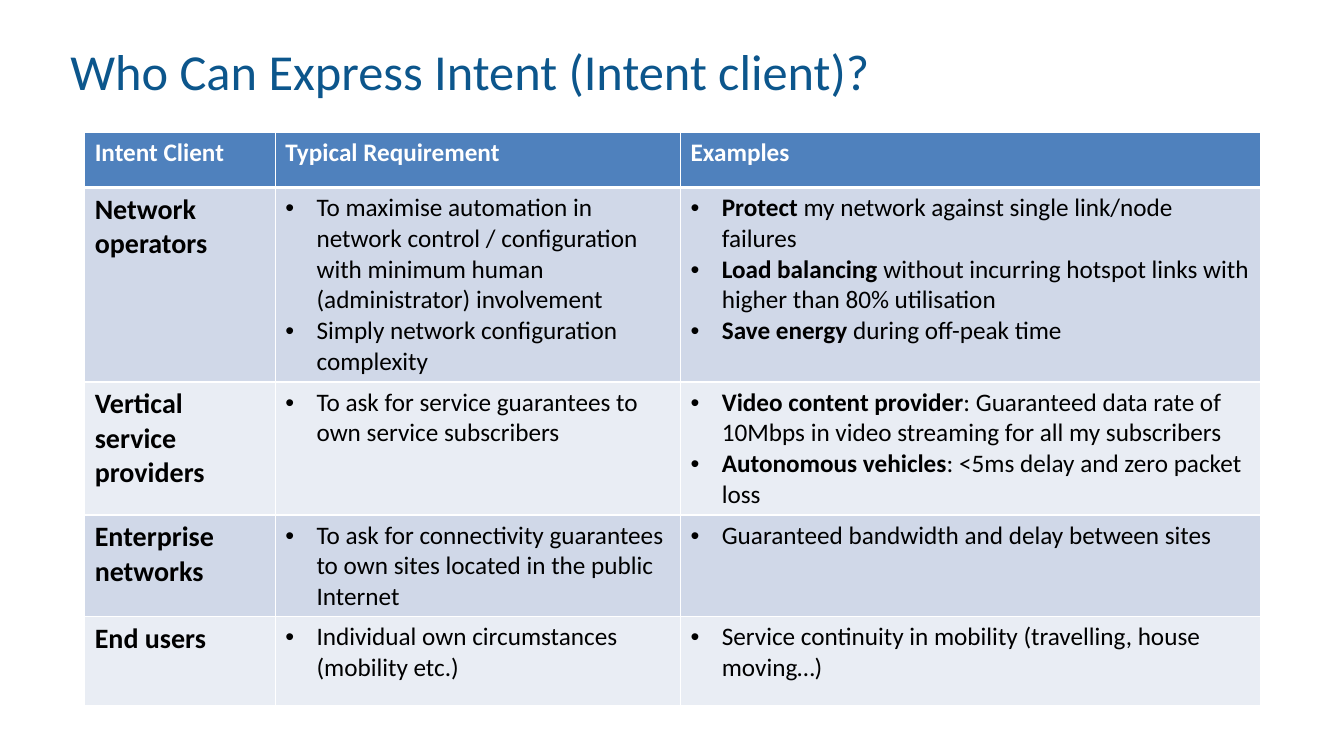
from lxml import etree
from pptx import Presentation
from pptx.dml.color import RGBColor
from pptx.enum.text import MSO_ANCHOR
from pptx.oxml.ns import qn
from pptx.util import Pt

MIDDLE = MSO_ANCHOR.MIDDLE
PX = 9144  # EMU per px, at 100 px to the inch
FONT = "Calibri"
COLOURS = {
    "title": "0C568C",
    "header": "4F81BD",
    "odd row": "D0D8E8",
    "even row": "E9EDF4",
    "light": "FFFFFF",
    "text": "000000",
}

TITLE = "Who Can Express Intent (Intent client)?"
HEADINGS = ["Intent Client", "Typical Requirement", "Examples"]
# Each bullet is a bold lead followed by plain text.
CLIENTS = [
    ("Network operators",
     [("", "To maximise automation in network control / configuration "
           "with minimum human (administrator) involvement"),
      ("", "Simply network configuration complexity")],
     [("Protect", " my network against single link/node failures"),
      ("Load balancing ", "without incurring hotspot links with higher than 80% utilisation"),
      ("Save energy ", "during off-peak time")]),
    ("Vertical service providers",
     [("", "To ask for service guarantees to own service subscribers")],
     [("Video content provider",
       ": Guaranteed data rate of 10Mbps in video streaming for all my subscribers"),
      ("Autonomous vehicles", ": <5ms delay and zero packet loss")]),
    ("Enterprise networks",
     [("", "To ask for connectivity guarantees to own sites located in the public Internet")],
     [("", "Guaranteed bandwidth and delay between sites")]),
    ("End users",
     [("", "Individual own circumstances (mobility etc.)")],
     [("", "Service continuity in mobility (travelling, house moving…)")]),
]
COLUMN_WIDTHS = [189, 402, 575]
ROW_HEIGHTS = [55, 193, 132, 101, 88]


def colour(name):
    return RGBColor.from_string(COLOURS[name])


class SlideBuilder:
    def __init__(self, page):
        self.page = page

    def style(self, paragraph, size, colour_name, bold=None):
        font = paragraph.font
        font.name, font.size, font.bold = FONT, Pt(size), bold
        font.color.rgb = colour(colour_name)

    def title(self, text, left, top, width, height):
        box = self.page.shapes.add_textbox(left * PX, top * PX, width * PX, height * PX)
        frame = box.text_frame
        frame.word_wrap = True
        frame.vertical_anchor = MIDDLE
        paragraph = frame.paragraphs[0]
        paragraph.text = text
        paragraph.line_spacing = Pt(35)
        self.style(paragraph, 36, "title")

    def table(self, left, top, widths, heights):
        frame = self.page.shapes.add_table(
            len(heights), len(widths), left * PX, top * PX, sum(widths) * PX, sum(heights) * PX)
        table = frame.table
        table.horz_banding = False
        for column, width in zip(table.columns, widths):
            column.width = width * PX
        for row, height in zip(table.rows, heights):
            row.height = height * PX
        return table

    def cell_look(self, cell, fill, top=1, bottom=1):
        """Set the fill and the white borders, with top and bottom widths in points."""
        properties = cell._tc.get_or_add_tcPr()
        for side, width in (("L", 1), ("R", 1), ("T", top), ("B", bottom)):
            line = etree.SubElement(properties, qn("a:ln" + side), w=str(Pt(width)))
            solid = etree.SubElement(line, qn("a:solidFill"))
            etree.SubElement(solid, qn("a:srgbClr"), val=COLOURS["light"])
        cell.fill.solid()
        cell.fill.fore_color.rgb = colour(fill)

    def label(self, cell, text, size, colour_name):
        paragraph = cell.text_frame.paragraphs[0]
        paragraph.text = text
        self.style(paragraph, size, colour_name, bold=True)

    def bullets(self, cell, items, indent=31):
        frame = cell.text_frame
        for index, (lead, rest) in enumerate(items):
            paragraph = frame.add_paragraph() if index else frame.paragraphs[0]
            properties = paragraph._p.get_or_add_pPr()
            properties.set("marL", str(indent * PX))
            properties.set("indent", str(-indent * PX))
            etree.SubElement(properties, qn("a:buFont"), typeface="Arial")
            etree.SubElement(properties, qn("a:buChar"), char="•")
            self.style(paragraph, 18, "text")
            for text, bold in ((lead, True), (rest, False)):
                if text:
                    span = paragraph.add_run()
                    span.text = text
                    span.font.bold = bold


def main():
    deck = Presentation()
    deck.slide_width, deck.slide_height = 1333 * PX, 750 * PX
    builder = SlideBuilder(deck.slides.add_slide(deck.slide_layouts[6]))
    builder.title(TITLE, 60, 13, 976, 126)

    table = builder.table(84, 131, COLUMN_WIDTHS, ROW_HEIGHTS)
    for column, heading in enumerate(HEADINGS):
        cell = table.cell(0, column)
        builder.cell_look(cell, "header", bottom=3)
        builder.label(cell, heading, 18, "light")

    for row, (client, requirements, examples) in enumerate(CLIENTS, start=1):
        for column in range(len(HEADINGS)):
            builder.cell_look(table.cell(row, column), "odd row" if row % 2 else "even row",
                              top=3 if row == 1 else 1)
        builder.label(table.cell(row, 0), client, 20, "text")
        builder.bullets(table.cell(row, 1), requirements)
        builder.bullets(table.cell(row, 2), examples)

    deck.save("out.pptx")


if __name__ == "__main__":
    main()
